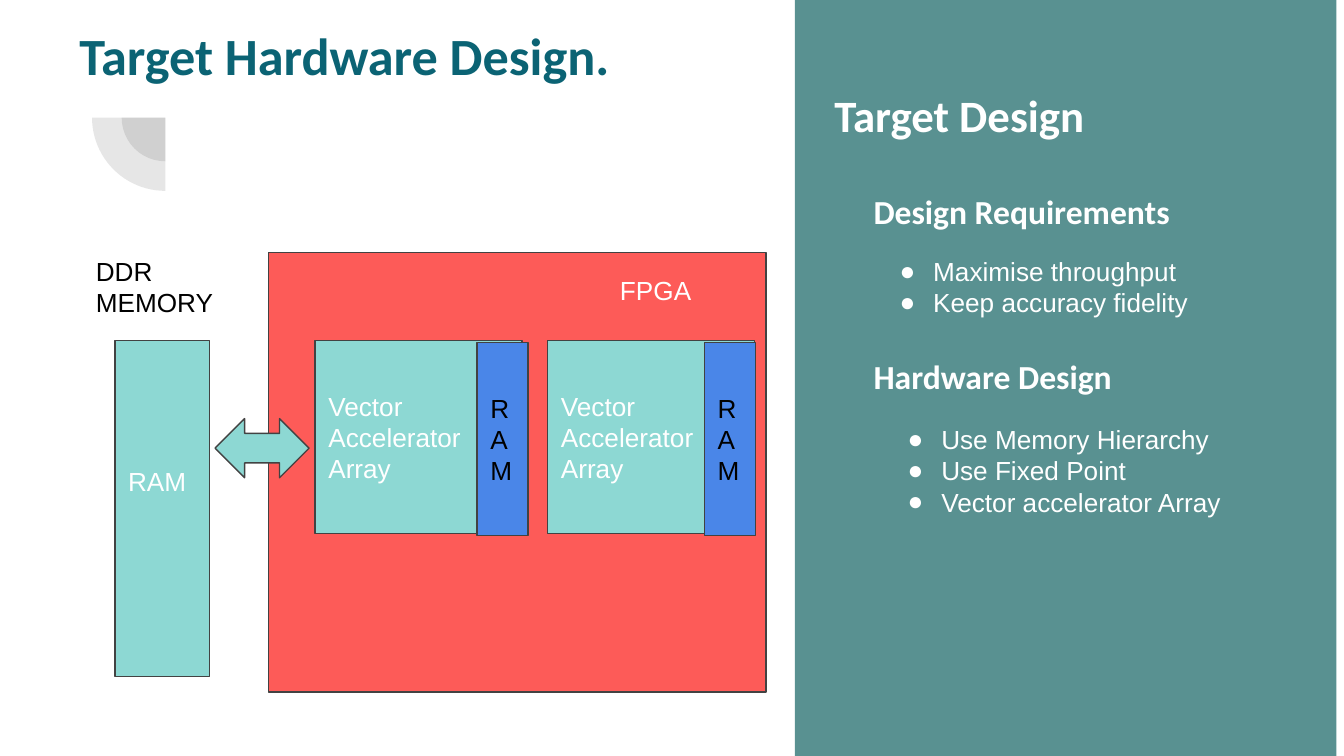
from dataclasses import dataclass

from lxml import etree
from pptx import Presentation
from pptx.dml.color import RGBColor
from pptx.enum.shapes import MSO_SHAPE
from pptx.enum.text import MSO_ANCHOR, MSO_AUTO_SIZE, PP_ALIGN
from pptx.oxml.ns import qn
from pptx.util import Inches, Pt

RECT, PIE, ARROW = MSO_SHAPE.RECTANGLE, MSO_SHAPE.PIE, MSO_SHAPE.LEFT_RIGHT_ARROW
TOP, MIDDLE = MSO_ANCHOR.TOP, MSO_ANCHOR.MIDDLE
LEFT, NO_FIT = PP_ALIGN.LEFT, MSO_AUTO_SIZE.NONE

WHITE, BLACK, GREY, TITLE_TEAL = "FFFFFF", "000000", "424242", "0B6374"
AQUA, RED, BLUE, PANEL = "8DD8D3", "FD5B58", "4A86E8", "599191"

WIDTH = Inches(10)
HEIGHT = WIDTH * 9 // 16
COLS, ROWS = 100, 56.25  # square cells
CELL = WIDTH / COLS
INSET = 1

ARRAY_TOP, ARRAY_W, ARRAY_H = 25.35, 15.4, 14.35
RAM_TOP, RAM_W = 25.5, 3.8


@dataclass(frozen=True)
class Area:
    """A place on the grid, in columns and rows."""
    col: float
    row: float
    cols: float
    rows: float

    def emu(self) -> list[int]:
        return [grid(n) for n in (self.col, self.row, self.cols, self.rows)]


@dataclass(frozen=True)
class Style:
    size: float = 14
    color: str = WHITE
    font: str = "Arial"
    bold: bool = False


@dataclass(frozen=True)
class Section:
    heading: str
    heading_area: Area
    items: tuple[str, ...]
    items_area: Area


BODY, LABEL = Style(), Style(color=BLACK)
SECTIONS = (
    Section("Design Requirements", Area(63.4, 13.2, 47.4, 7.7),
            ("Maximise throughput", "Keep accuracy fidelity"),
            Area(63.45, 18, 41.5, 7.7)),
    Section("Hardware Design", Area(63.4, 25.5, 47.4, 7.7),
            ("Use Memory Hierarchy", "Use Fixed Point", "Vector accelerator Array"),
            Area(64.05, 30.5, 41.5, 7.7)),
)


def grid(cells: float) -> int:
    return round(cells * CELL)


def rgb(color: str) -> RGBColor:
    return RGBColor.from_string(color)


def add_bullet(p, style: Style) -> None:
    pPr = p._p.get_or_add_pPr()
    pPr.set("marL", str(Inches(0.5)))
    pPr.set("indent", str(-Inches(0.25)))
    color = etree.SubElement(pPr, qn("a:buClr"))
    etree.SubElement(color, qn("a:srgbClr"), val=style.color)
    etree.SubElement(pPr, qn("a:buSzPts"), val=str(style.size * 100))
    etree.SubElement(pPr, qn("a:buFont"), typeface=style.font)
    etree.SubElement(pPr, qn("a:buChar"), char="●")


def write(sp, lines: tuple[str, ...], style: Style, anchor=TOP,
          bullets: bool = False, left_inset: float = INSET) -> None:
    tf = sp.text_frame
    tf.word_wrap, tf.auto_size, tf.vertical_anchor = True, NO_FIT, anchor
    tf.margin_left = grid(left_inset)
    tf.margin_top = tf.margin_right = tf.margin_bottom = grid(INSET)
    for i, line in enumerate(lines):
        p = tf.add_paragraph() if i else tf.paragraphs[0]
        p.alignment = LEFT
        if bullets:
            add_bullet(p, style)
        r = p.add_run()
        r.text = line
        r.font.name, r.font.size, r.font.bold = style.font, Pt(style.size), style.bold
        r.font.color.rgb = rgb(style.color)


def add_text(s, area: Area, lines: tuple[str, ...], style: Style, **options) -> None:
    write(s.shapes.add_textbox(*area.emu()), lines, style, **options)


def add_block(s, area: Area, fill: str, kind=RECT, line: str | None = GREY):
    sp = s.shapes.add_shape(kind, *area.emu())
    sp.shadow.inherit = False
    sp.fill.solid()
    sp.fill.fore_color.rgb = rgb(fill)
    if line:
        sp.line.color.rgb = rgb(line)
        sp.line.width = Pt(0.75)
    else:
        sp.line.fill.background()
    return sp


def add_quarter(s, center: tuple[float, float], radius: float) -> None:
    """Draw a faint lower-left quarter disc."""
    col, row = center
    area = Area(col - radius, row - radius, 2 * radius, 2 * radius)
    sp = add_block(s, area, GREY, PIE, line=None)
    sp.rotation = 270
    sp.adjustments[0], sp.adjustments[1] = 108, 162
    color = sp._element.spPr.find(qn("a:solidFill")).find(qn("a:srgbClr"))
    etree.SubElement(color, qn("a:alpha"), val="13000")


def add_accelerator(s, col: float, ram_col: float) -> None:
    array = add_block(s, Area(col, ARRAY_TOP, ARRAY_W, ARRAY_H), AQUA)
    write(array, ("Vector Accelerator", "Array"), BODY, anchor=MIDDLE)
    ram = add_block(s, Area(ram_col, RAM_TOP, RAM_W, ARRAY_H), BLUE)
    write(ram, ("RAM",), LABEL, anchor=MIDDLE)


def add_hardware(s) -> None:
    add_block(s, Area(20, 18.8, 37, 32.7), RED)
    add_block(s, Area(8.55, ARRAY_TOP, 7.05, 25), AQUA)
    add_block(s, Area(16, 31.15, 7, 4.4), AQUA, ARROW)
    add_text(s, Area(6.15, 18, 15.4, 9.3), ("DDR MEMORY",), LABEL)
    add_text(s, Area(8.55, 33.65, 7, 5.2), ("RAM",), BODY)
    add_text(s, Area(45.15, 19.4, 14, 10.1), ("FPGA",), BODY)
    add_accelerator(s, 23.45, 35.5)
    add_accelerator(s, 40.75, 52.4)


def add_panel(s) -> None:
    add_block(s, Area(59.15, 0, 40.3, ROWS), PANEL, line=None)
    add_text(s, Area(61.1, 5.5, 47.4, 7.7), ("Target Design",),
             Style(24, WHITE, "Calibri", True))
    for section in SECTIONS:
        add_text(s, section.heading_area, (section.heading,),
                 Style(18, WHITE, "Calibri", True), left_inset=1.6)
        add_text(s, section.items_area, section.items, BODY, bullets=True)


def main() -> None:
    prs = Presentation()
    prs.slide_width, prs.slide_height = WIDTH, HEIGHT
    s = prs.slides.add_slide(prs.slide_layouts[5])
    title = s.shapes.title
    title.left, title.top, title.width, title.height = Area(4.9, 0.7, 76.9, 10.9).emu()
    write(title, ("Target Hardware Design.",), Style(28, TITLE_TEAL, "Calibri", True))
    for radius in (3.25, 5.45):
        add_quarter(s, (12.3, 8.75), radius)
    add_hardware(s)
    add_panel(s)
    prs.save("out.pptx")


if __name__ == "__main__":
    main()
